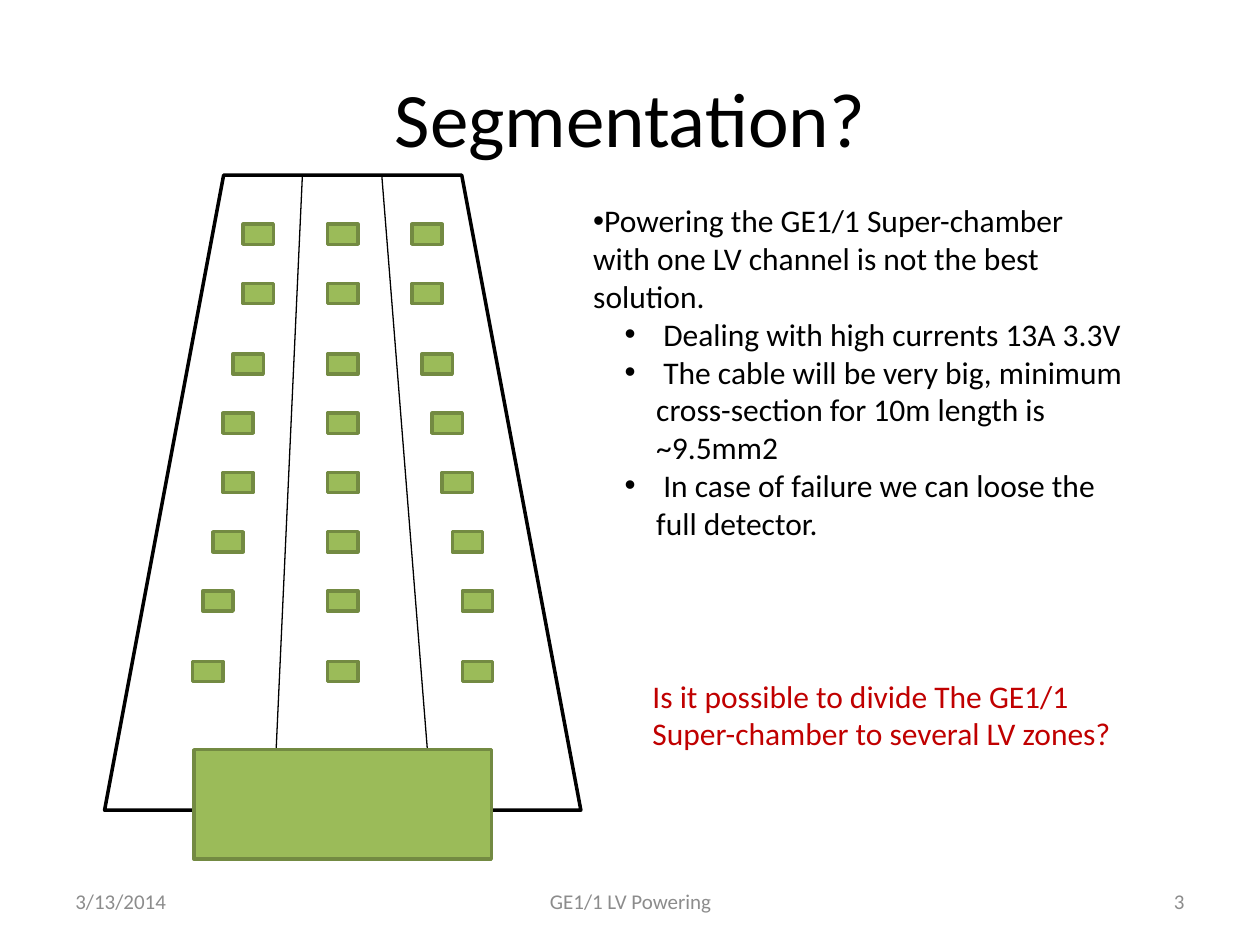
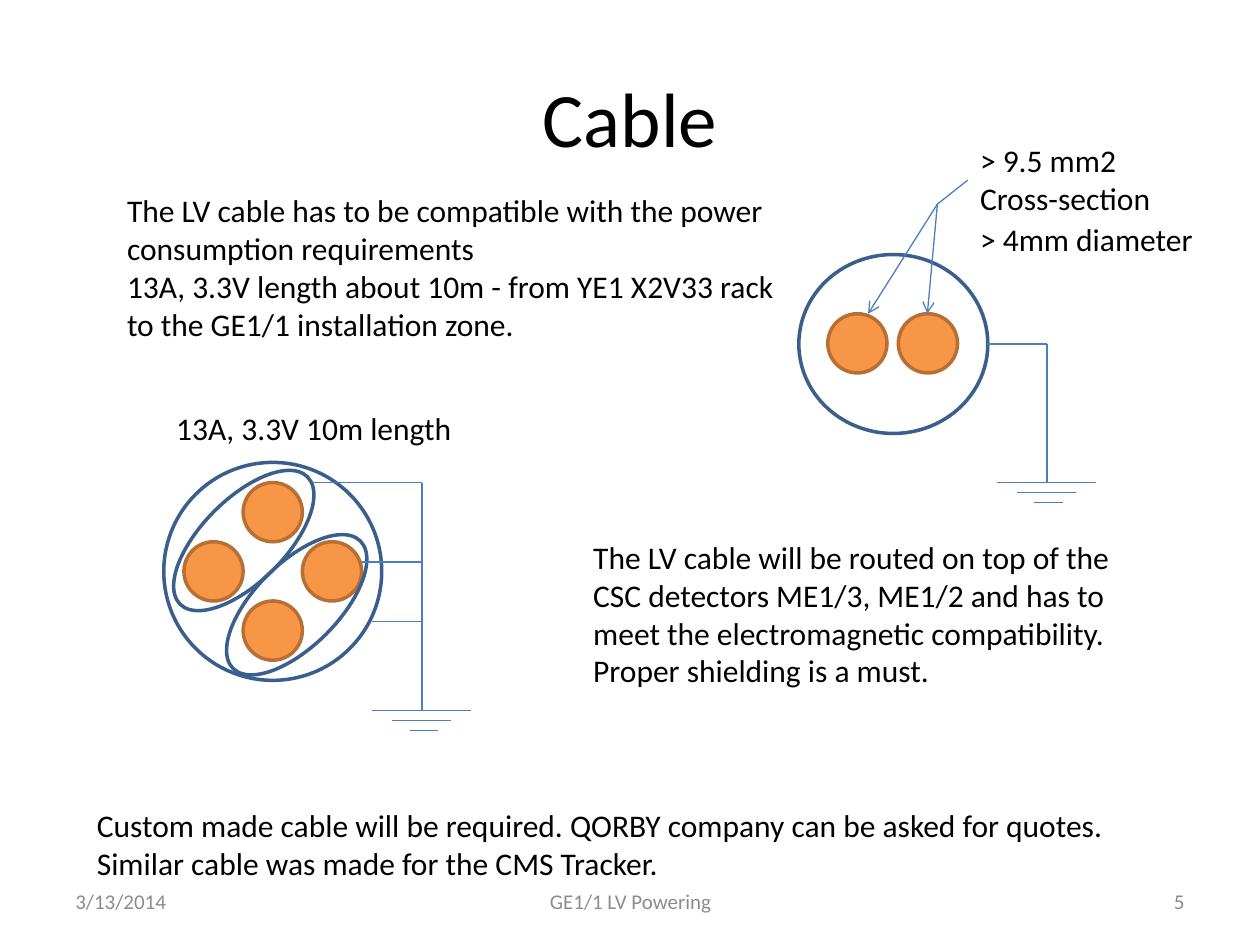
import dataclasses
import typing

import lxml.etree
import pptx
import pptx.dml.color
import pptx.enum.shapes
import pptx.enum.text
import pptx.oxml.ns
import pptx.util

EMU_PER_PX = 9144
SHAPE = pptx.enum.shapes.MSO_SHAPE
ALIGN = pptx.enum.text.PP_ALIGN
ANCHOR = pptx.enum.text.MSO_ANCHOR


@dataclasses.dataclass(frozen=True)
class Theme:
    font: str = "Calibri"
    title_size: int = 44
    body_size: int = 18
    footer_size: int = 12
    thick: float = 2
    thin: float = 0.75
    ink: str = "000000"
    paper: str = "FFFFFF"
    question: str = "C00000"
    footer: str = "8C8C8C"
    board: str = "9BBB59"
    board_edge: str = "738A42"
    copper: str = "F79646"
    copper_edge: str = "B76F34"
    sheath: str = "3A5F8C"
    wire: str = "4B7EBC"


THEME = Theme()


class Box(typing.NamedTuple):
    left: int
    top: int
    width: int
    height: int


class Point(typing.NamedTuple):
    x: int
    y: int


class ChipRow(typing.NamedTuple):
    top: int
    left_steps: int
    right_steps: int


@dataclasses.dataclass(frozen=True)
class Line:
    text: str
    bullet_level: int | None = None


@dataclasses.dataclass(frozen=True)
class Note:
    box: Box
    lines: tuple[Line, ...]
    color: str = THEME.ink
    size: int = THEME.body_size
    align: ALIGN | None = None
    anchor: ANCHOR = ANCHOR.TOP
    wrap: bool = True
    grow: bool = True


CHIP_ROWS = (
    ChipRow(178, 0, 0),
    ChipRow(225, 0, 0),
    ChipRow(281, 1, 1),
    ChipRow(328, 2, 2),
    ChipRow(375, 2, 3),
    ChipRow(422, 3, 4),
    ChipRow(469, 4, 5),
    ChipRow(525, 5, 5),
)
CHIP_STEP = 8
GROUND_BARS = ((-40, 39), (-24, 23), (-10, 13))
GROUND_GAP = 8
CORE_DIAMETER = 47

SEGMENTATION_NOTES = (
    Note(
        Box(461, 155, 441, 313),
        (
            Line("Powering the GE1/1 Super-chamber with one LV channel is not the best solution.", 0),
            Line(" Dealing with high currents 13A 3.3V", 1),
            Line(" The cable will be very big, minimum cross-section for 10m length is ~9.5mm2", 1),
            Line(" In case of failure we can loose the full detector.", 1),
        ),
    ),
    Note(
        Box(508, 532, 409, 71),
        (Line("Is it possible to divide The GE1/1 Super-chamber to several LV zones?"),),
        THEME.question,
    ),
)
CABLE_NOTES = (
    Note(
        Box(91, 147, 535, 131),
        (
            Line("The LV cable has to be compatible with the power consumption requirements"),
            Line("13A, 3.3V length about 10m - from YE1 X2V33 rack to the GE1/1 installation zone."),
        ),
    ),
    Note(Box(130, 320, 283, 40), (Line("13A, 3.3V 10m length"),)),
    Note(Box(768, 107, 173, 71), (Line("> 9.5 mm2 Cross-section"),)),
    Note(Box(768, 170, 191, 40), (Line("> 4mm diameter"),), wrap=False),
    Note(
        Box(461, 422, 472, 131),
        (
            Line(
                "The LV cable will be routed on top of the CSC detectors ME1/3, ME1/2 and has to "
                "meet the electromagnetic compatibility. Proper shielding is a must."
            ),
        ),
    ),
    Note(
        Box(67, 635, 858, 71),
        (
            Line(
                "Custom made cable will be required. QORBY company can be asked for quotes. "
                "Similar cable was made for the CMS Tracker."
            ),
        ),
    ),
)


def emu(px: int) -> int:
    return px * EMU_PER_PX


def rgb(color: str) -> pptx.dml.color.RGBColor:
    return pptx.dml.color.RGBColor.from_string(color)


def add_run(paragraph, text: str, size: int, color: str) -> None:
    run = paragraph.add_run()
    run.text = text
    run.font.name = THEME.font
    run.font.size = pptx.util.Pt(size)
    run.font.color.rgb = rgb(color)


def add_bullet(paragraph, level: int) -> None:
    paragraph.level = level
    properties = paragraph._p.get_or_add_pPr()
    properties.set("marL", str(emu(50 * level)))
    properties.set("indent", str(emu(-25 * level)))
    font = lxml.etree.SubElement(properties, pptx.oxml.ns.qn("a:buFont"))
    font.set("typeface", "Arial")
    bullet = lxml.etree.SubElement(properties, pptx.oxml.ns.qn("a:buChar"))
    bullet.set("char", "•")


def add_note(slide, note: Note) -> None:
    frame = slide.shapes.add_textbox(*map(emu, note.box)).text_frame
    frame.word_wrap = note.wrap
    frame.vertical_anchor = note.anchor
    if note.grow:
        frame.auto_size = pptx.enum.text.MSO_AUTO_SIZE.SHAPE_TO_FIT_TEXT
    for index, line in enumerate(note.lines):
        paragraph = frame.add_paragraph() if index else frame.paragraphs[0]
        paragraph.alignment = note.align
        if line.bullet_level is not None:
            add_bullet(paragraph, line.bullet_level)
        add_run(paragraph, line.text, note.size, note.color)


def add_figure(slide, kind: SHAPE, box: Box, edge: str, fill: str | None = None, rotation: int = 0):
    figure = slide.shapes.add_shape(kind, *map(emu, box))
    figure.shadow.inherit = False
    figure.rotation = rotation
    if fill is None:
        figure.fill.background()
    else:
        figure.fill.solid()
        figure.fill.fore_color.rgb = rgb(fill)
    figure.line.color.rgb = rgb(edge)
    figure.line.width = pptx.util.Pt(THEME.thick)
    return figure


def add_wire(slide, start: Point, end: Point, color: str = THEME.wire, arrow: bool = False) -> None:
    wire = slide.shapes.add_connector(
        pptx.enum.shapes.MSO_CONNECTOR.STRAIGHT, *map(emu, start + end)
    )
    wire.line.color.rgb = rgb(color)
    wire.line.width = pptx.util.Pt(THEME.thin)
    if arrow:
        head = lxml.etree.SubElement(wire.line._get_or_add_ln(), pptx.oxml.ns.qn("a:tailEnd"))
        head.set("type", "arrow")
    lxml.etree.SubElement(wire._element.spPr, pptx.oxml.ns.qn("a:effectLst"))


def add_path(slide, *points: Point) -> None:
    for start, end in zip(points, points[1:]):
        add_wire(slide, start, end)


def add_ground(slide, top: Point) -> None:
    for index, (left, right) in enumerate(GROUND_BARS):
        y = top.y + index * GROUND_GAP
        add_wire(slide, Point(top.x + left, y), Point(top.x + right, y))


def add_cores(slide, *corners: Point) -> None:
    for corner in corners:
        box = Box(corner.x, corner.y, CORE_DIAMETER, CORE_DIAMETER)
        add_figure(slide, SHAPE.OVAL, box, THEME.copper_edge, THEME.copper)


def add_titled_slide(deck, heading: str):
    slide = deck.slides.add_slide(deck.slide_layouts[5])
    title = slide.shapes.title
    title.left, title.top, title.width, title.height = map(emu, Box(50, 30, 900, 125))
    title.text_frame.vertical_anchor = ANCHOR.MIDDLE
    paragraph = title.text_frame.paragraphs[0]
    paragraph.alignment = ALIGN.CENTER
    add_run(paragraph, heading, THEME.title_size, THEME.ink)
    return slide


def add_footer(slide, number: int) -> None:
    for left, width, text, align in (
        (50, 233, "3/13/2014", ALIGN.LEFT),
        (717, 233, str(number), ALIGN.RIGHT),
        (342, 317, "GE1/1 LV Powering", ALIGN.CENTER),
    ):
        add_note(
            slide,
            Note(
                Box(left, 695, width, 40), (Line(text),), THEME.footer,
                THEME.footer_size, align, ANCHOR.MIDDLE, grow=False,
            ),
        )


def draw_chamber(slide) -> None:
    chamber = add_figure(slide, SHAPE.TRAPEZOID, Box(83, 139, 378, 504), THEME.ink, THEME.paper)
    chamber.adjustments[0] = 0.25
    for top_x, bottom_x in ((240, 217), (303, 343)):
        add_wire(slide, Point(top_x, 139), Point(bottom_x, 643), THEME.ink)
    for row in CHIP_ROWS:
        for left in (193 - CHIP_STEP * row.left_steps, 260, 327 + CHIP_STEP * row.right_steps):
            chip = Box(left, row.top, 24, 16)
            add_figure(slide, SHAPE.RECTANGLE, chip, THEME.board_edge, THEME.board)
    add_figure(slide, SHAPE.RECTANGLE, Box(154, 595, 236, 87), THEME.board_edge, THEME.board)


def draw_two_core_cable(slide) -> None:
    add_cores(slide, Point(657, 249), Point(713, 249))
    add_figure(slide, SHAPE.OVAL, Box(634, 202, 150, 142), THEME.sheath)
    ground = Point(831, 383)
    add_path(slide, Point(783, 273), Point(831, 273), ground)
    add_ground(slide, ground)
    fork = Point(744, 162)
    add_wire(slide, fork, Point(768, 143))
    for core_top in (Point(689, 249), Point(736, 249)):
        add_wire(slide, fork, core_top, arrow=True)


def draw_four_core_cable(slide) -> None:
    add_cores(slide, Point(146, 430), Point(240, 430), Point(193, 477), Point(193, 383))
    for pair in (Box(122, 396, 143, 66), Box(164, 447, 143, 66)):
        add_figure(slide, SHAPE.OVAL, pair, THEME.sheath, rotation=315)
    add_figure(slide, SHAPE.OVAL, Box(130, 367, 173, 173), THEME.sheath)
    ground = Point(335, 564)
    add_path(slide, Point(248, 383), Point(335, 383), ground)
    for shield in (Point(287, 446), Point(295, 493)):
        add_wire(slide, shield, Point(ground.x, shield.y))
    add_ground(slide, ground)


def main() -> None:
    deck = pptx.Presentation()
    deck.slide_width, deck.slide_height = emu(1000), emu(750)

    segmentation = add_titled_slide(deck, "Segmentation?")
    draw_chamber(segmentation)
    cable = add_titled_slide(deck, "Cable")
    draw_two_core_cable(cable)
    draw_four_core_cable(cable)

    for slide, notes, number in (
        (segmentation, SEGMENTATION_NOTES, 3),
        (cable, CABLE_NOTES, 5),
    ):
        for note in notes:
            add_note(slide, note)
        add_footer(slide, number)

    deck.save("out.pptx")


if __name__ == "__main__":
    main()
